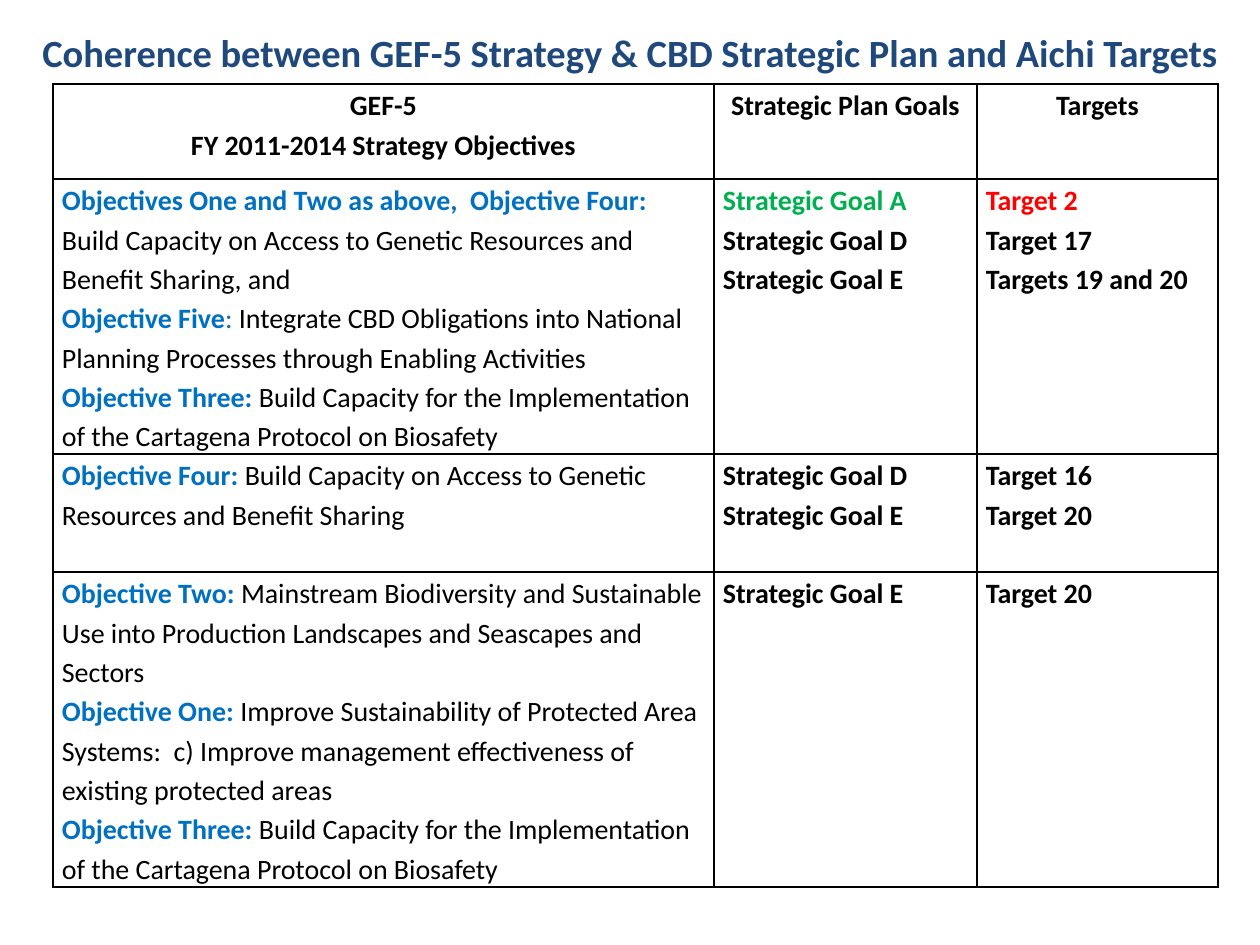
import pptx
import pptx.util
import pptx.dml.color
import pptx.enum.text
import pptx.oxml
import pptx.oxml.ns
from dataclasses import dataclass

PX_PER_INCH = 126
ALIGN = pptx.enum.text.PP_ALIGN
ANCHOR = pptx.enum.text.MSO_ANCHOR


@dataclass(frozen=True)
class Theme:
    font: str = "Calibri"
    title_size: int = 22
    cell_size: int = 16
    border_width: int = 1
    line_spacing: float = 1.15
    title: str = "1F497D"
    text: str = "000000"
    objective: str = "0070C0"
    goal: str = "00B050"
    target: str = "FF0000"
    paper: str = "FFFFFF"


THEME = Theme()


def px(n):
    return pptx.util.Emu(round(n * 914400 / PX_PER_INCH))


def rgb(value):
    return pptx.dml.color.RGBColor.from_string(value)


def set_all(obj, values):
    for name, value in values.items():
        setattr(obj, name, value)


def strong(text, color=THEME.text):
    return [(text, color, True)]


def objective(label, body):
    return [(label + " ", THEME.objective, True), (body, THEME.text, False)]


def write(tf, paragraphs, size, align, spacing=1.0):
    for i, runs in enumerate(paragraphs):
        p = tf.paragraphs[0] if i == 0 else tf.add_paragraph()
        set_all(p, {"alignment": align, "line_spacing": spacing})
        for text, color, bold in runs:
            r = p.add_run()
            r.text = text
            set_all(r.font, {"name": THEME.font, "size": pptx.util.Pt(size), "bold": bold})
            r.font.color.rgb = rgb(color)


def add_title(s, text):
    sp = s.shapes.add_textbox(px(21), px(0), px(1218), px(105))
    tf = sp.text_frame
    set_all(tf, {"word_wrap": True, "vertical_anchor": ANCHOR.MIDDLE})
    write(tf, [strong(text, THEME.title)], THEME.title_size, ALIGN.CENTER)


def add_borders(cell):
    tc_pr = cell._tc.get_or_add_tcPr()
    width = pptx.util.Pt(THEME.border_width)
    for side in ("lnL", "lnR", "lnT", "lnB"):
        tc_pr.append(pptx.oxml.parse_xml(
            f'<a:{side} {pptx.oxml.ns.nsdecls("a")} w="{width}"><a:solidFill>'
            f'<a:srgbClr val="{THEME.text}"/></a:solidFill></a:{side}>'))


def fill_cell(cell, paragraphs, align):
    set_all(cell, {"margin_left": px(9), "margin_right": px(9), "margin_top": 0,
                   "margin_bottom": 0, "vertical_anchor": ANCHOR.TOP})
    add_borders(cell)
    cell.fill.solid()
    cell.fill.fore_color.rgb = rgb(THEME.paper)
    write(cell.text_frame, paragraphs, THEME.cell_size, align, THEME.line_spacing)


def add_grid(s, rows, widths, heights):
    sp = s.shapes.add_table(len(rows), len(widths), px(53), px(84),
                            px(sum(widths)), px(sum(heights)))
    table = sp.table
    set_all(table, {"first_row": False, "horz_banding": False})
    for column, width in zip(table.columns, widths):
        column.width = px(width)
    for row, height in zip(table.rows, heights):
        row.height = px(height)
    for i, contents in enumerate(rows):
        for j, paragraphs in enumerate(contents):
            align = ALIGN.CENTER if i == 0 else ALIGN.LEFT if j == 0 else ALIGN.JUSTIFY
            fill_cell(table.cell(i, j), paragraphs, align)


def coherence_rows():
    biosafety = objective(
        "Objective Three:",
        "Build Capacity for the Implementation of the Cartagena Protocol on Biosafety")
    access = "Build Capacity on Access to Genetic Resources and Benefit Sharing"
    goal_d, goal_e = strong("Strategic Goal D"), strong("Strategic Goal E")
    target_20 = strong("Target 20")
    return [
        [[strong("GEF-5"), strong("FY 2011-2014 Strategy Objectives")],
         [strong("Strategic Plan Goals")],
         [strong("Targets")]],
        [[objective("Objectives One and Two as above,  Objective Four:", access + ", and"),
          [("Objective Five", THEME.objective, True),
           (": ", THEME.objective, False),
           ("Integrate CBD Obligations into National Planning Processes through "
            "Enabling Activities", THEME.text, False)],
          biosafety],
         [strong("Strategic Goal A", THEME.goal), goal_d, goal_e],
         [strong("Target 2", THEME.target), strong("Target 17"),
          strong("Targets 19 and 20")]],
        [[objective("Objective Four:", access)],
         [goal_d, goal_e],
         [strong("Target 16"), target_20]],
        [[objective("Objective Two:",
                    "Mainstream Biodiversity and Sustainable Use into Production "
                    "Landscapes and Seascapes and Sectors"),
          objective("Objective One:",
                    "Improve Sustainability of Protected Area Systems:  c) Improve "
                    "management effectiveness of existing protected areas"),
          biosafety],
         [goal_e],
         [target_20]],
    ]


def main():
    prs = pptx.Presentation()
    set_all(prs, {"slide_width": px(1260), "slide_height": px(945)})
    s = prs.slides.add_slide(prs.slide_layouts[6])
    add_title(s, "Coherence between GEF-5 Strategy & CBD Strategic Plan and Aichi Targets")
    add_grid(s, coherence_rows(), widths=[661, 263, 241], heights=[95, 275, 118, 315])
    prs.save("out.pptx")


if __name__ == "__main__":
    main()
